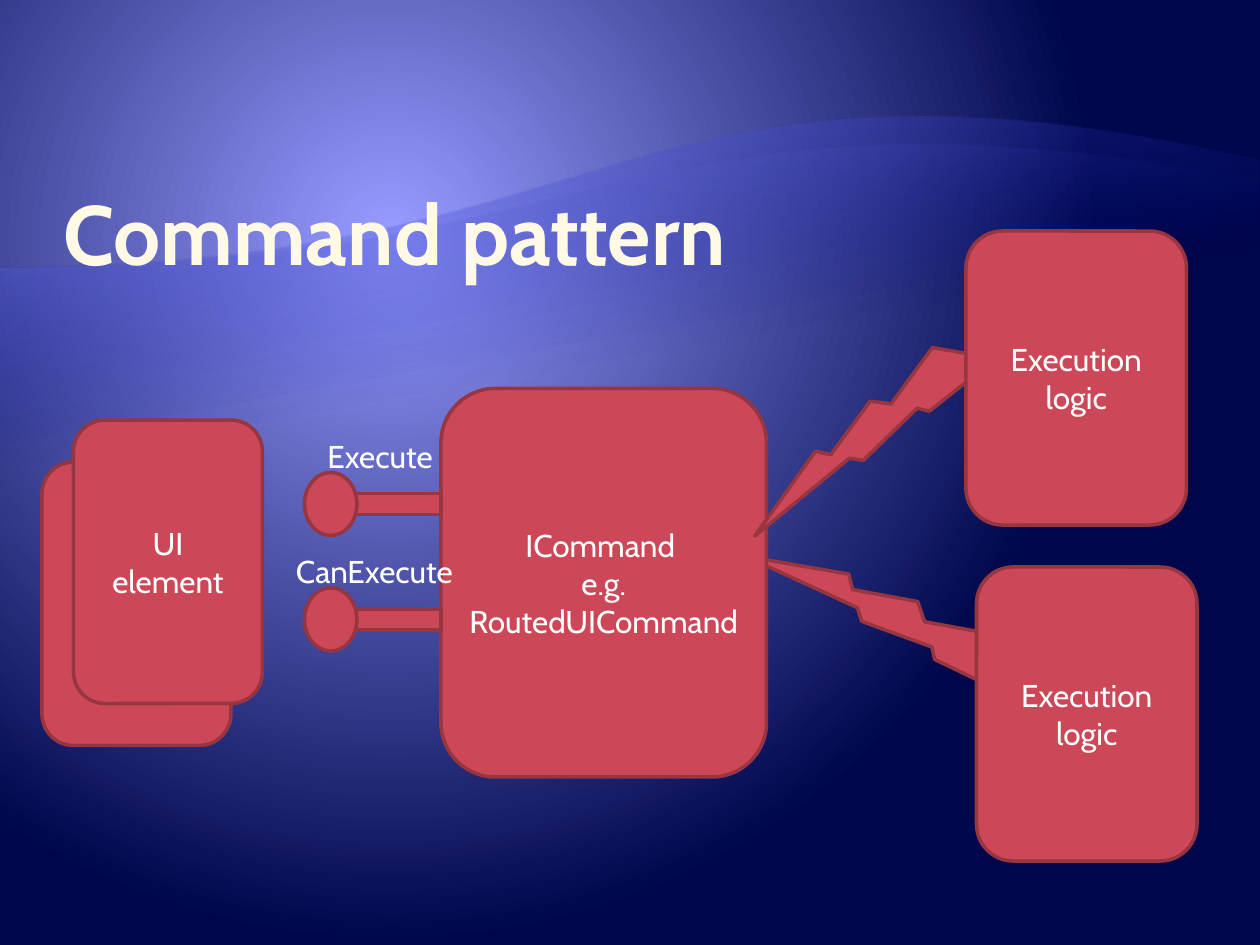
from lxml import etree
from pptx import Presentation
from pptx.dml.color import RGBColor
from pptx.enum.shapes import MSO_SHAPE
from pptx.enum.text import MSO_ANCHOR, MSO_AUTO_SIZE, PP_ALIGN
from pptx.oxml.ns import qn
from pptx.util import Pt

ROUND = MSO_SHAPE.ROUNDED_RECTANGLE
RECT = MSO_SHAPE.RECTANGLE
OVAL = MSO_SHAPE.OVAL
BOLT = MSO_SHAPE.LIGHTNING_BOLT
WAVE = MSO_SHAPE.FLOWCHART_DOCUMENT
LEFT, CENTER = PP_ALIGN.LEFT, PP_ALIGN.CENTER
MIDDLE, BOTTOM = MSO_ANCHOR.MIDDLE, MSO_ANCHOR.BOTTOM
FIT, FIXED = MSO_AUTO_SIZE.SHAPE_TO_FIT_TEXT, MSO_AUTO_SIZE.NONE

FONT = "Cabin"
COLORS = {
    "glow": "969AFF", "night": "00064B",
    "deep": "000D9E", "pale": "797FFF", "mist": "A3A7FF",
    "red": "CC4757", "edge": "973540",
    "text": "FFFFFF", "title": "FFF9E5", "rim": "8F8462",
}


def rgb(name):
    return RGBColor.from_string(COLORS[name])


def sub(node, tag, **attrs):
    return etree.SubElement(node, qn(tag), attrs)


def set_stops(root, stops):
    """Replace a gradient's content with (percent, colour, opacity) stops."""
    grad = root.find(".//" + qn("a:gradFill"))
    for child in list(grad):
        grad.remove(child)
    grad.set("rotWithShape", "1")
    rows = sub(grad, "a:gsLst")
    for pos, name, alpha in stops:
        stop = sub(rows, "a:gs", pos=str(pos * 1000))
        color = sub(stop, "a:srgbClr", val=COLORS[name])
        if alpha < 100:
            sub(color, "a:alpha", val=str(alpha * 1000))
    return grad


def paint_back(slide):
    slide.background.fill.gradient()
    stops = [(0, "glow", 100), (1, "glow", 100), (90, "night", 100)]
    grad = set_stops(slide.element, stops)
    path = sub(grad, "a:path", path="circle")
    sub(path, "a:fillToRect", l="31000", t="25000", r="69000", b="75000")


def add_wave(shapes, top, high, name, alpha):
    wave = shapes.add_shape(WAVE, 0, Pt(top), Pt(720), Pt(high))
    wave.rotation = 180
    wave.shadow.inherit = False
    wave.line.fill.background()
    wave.fill.gradient()
    grad = set_stops(wave.element, [(65, "deep", 0), (100, name, alpha)])
    sub(grad, "a:lin", ang=str(80 * 60000), scaled="0")


def add_run(par, text, size=18, color="text"):
    run = par.add_run()
    run.text = text
    run.font.name = FONT
    run.font.size = Pt(size)
    run.font.color.rgb = rgb(color)
    return run


def add_shape(shapes, kind, box, lines=(), turn=0):
    shape = shapes.add_shape(kind, *map(Pt, box))
    shape.rotation = turn
    shape.shadow.inherit = False
    shape.fill.solid()
    shape.fill.fore_color.rgb = rgb("red")
    shape.line.color.rgb = rgb("edge")
    shape.line.width = Pt(2)
    frame = shape.text_frame
    frame.vertical_anchor = MIDDLE
    for i, text in enumerate(lines):
        par = frame.add_paragraph() if i else frame.paragraphs[0]
        par.alignment = CENTER
        add_run(par, text)


def add_port(shapes, top):
    """A stem that ends in a knob, as one group."""
    group = shapes.add_group_shape()
    add_shape(group.shapes, RECT, (198, top + 12, 54, 12))
    add_shape(group.shapes, OVAL, (174, top, 30, 36))


def add_label(shapes, text, left, top, wide):
    frame = shapes.add_textbox(Pt(left), Pt(top), Pt(wide), Pt(29)).text_frame
    frame.word_wrap = False
    frame.auto_size = FIT
    add_run(frame.paragraphs[0], text)


def set_title(title, text):
    title.left, title.top = Pt(36), Pt(72)
    title.width, title.height = Pt(648), Pt(90)
    frame = title.text_frame
    frame.auto_size = FIXED
    frame.vertical_anchor = BOTTOM
    frame.margin_left = frame.margin_right = 0
    frame.margin_top = frame.margin_bottom = Pt(0.72)
    par = frame.paragraphs[0]
    par.alignment = LEFT
    run = add_run(par, text, 48, "title")
    run.font.bold = True
    # Hairline around the letters
    props = title.element.find(".//" + qn("a:rPr"))
    line = sub(props, "a:ln", w=str(Pt(0.04)))
    sub(sub(line, "a:solidFill"), "a:srgbClr", val=COLORS["rim"])
    props.insert(0, line)
    # Bring the title in front of what is drawn so far
    title.element.getparent().append(title.element)


def main():
    deck = Presentation()
    deck.slide_width, deck.slide_height = Pt(720), Pt(540)
    slide = deck.slides.add_slide(deck.slide_layouts[5])
    shapes = slide.shapes

    # Backdrop
    paint_back(slide)
    add_wave(shapes, 60.5, 467, "pale", 55)
    add_wave(shapes, 78, 380, "mist", 30)

    # Lower bolt, title, command and upper bolt
    add_shape(shapes, BOLT, (481.7, 265.7, 54, 168), turn=128.9)
    set_title(shapes.title, "Command pattern")
    add_shape(shapes, ROUND, (252, 222, 186, 222),
              ["ICommand ", "e.g. RoutedUICommand"])
    add_shape(shapes, BOLT, (468.7, 162, 54, 168), turn=64.7)

    # Ports of the command, with labels wide enough for one line
    ports = [("Execute", 180, 246, 76), ("CanExecute", 162, 312, 106)]
    for text, left, top, wide in ports:
        add_port(shapes, top + 24)
        add_label(shapes, text, left, top, wide)

    # Stacked elements
    add_shape(shapes, ROUND, (24, 264, 108, 162))
    add_shape(shapes, ROUND, (42, 240, 108, 162), ["UI element"])

    # Logic boxes
    for left, top in [(552, 132), (558, 324)]:
        add_shape(shapes, ROUND, (left, top, 126, 168), ["Execution logic"])

    deck.save("out.pptx")


if __name__ == "__main__":
    main()
